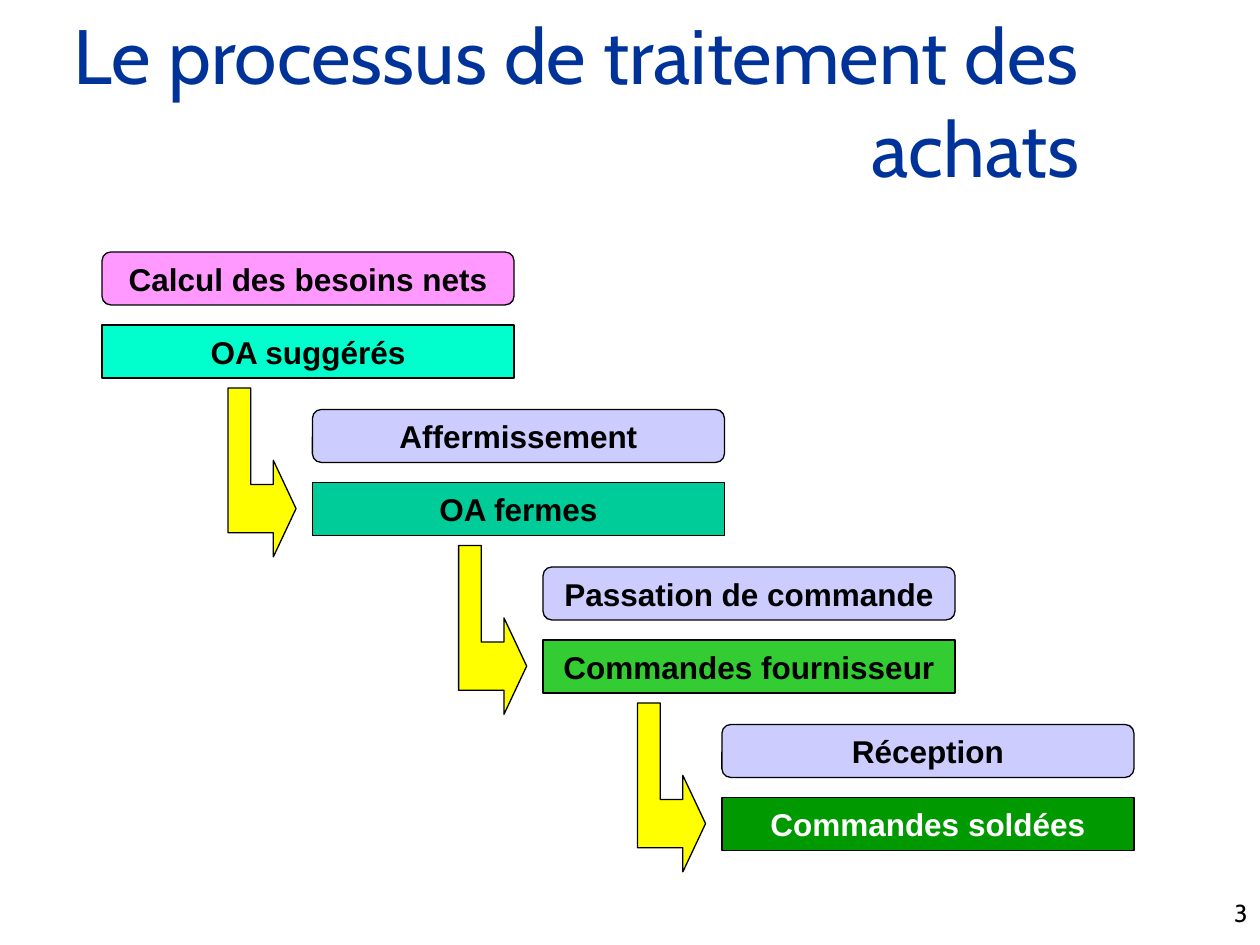
from dataclasses import dataclass

from pptx import Presentation
from pptx.dml.color import RGBColor
from pptx.enum.shapes import MSO_SHAPE
from pptx.enum.text import MSO_ANCHOR, MSO_AUTO_SIZE, PP_ALIGN
from pptx.util import Inches, Pt


@dataclass(frozen=True)
class Theme:
    title: str = "003399"
    black: str = "000000"
    white: str = "FFFFFF"
    pink: str = "FF99FF"
    lilac: str = "CCCCFF"
    aqua: str = "00FFCC"
    teal: str = "00CC99"
    green: str = "33CC33"
    dark_green: str = "009900"
    yellow: str = "FFFF00"
    heading_font: str = "Cabin"
    body_font: str = "Arial"
    title_size: int = 44
    body_size: int = 18
    number_size: int = 14
    line_width: float = 0.75


THEME = Theme()
BOX_W, BOX_H = 3.27, 0.42
RESULT_OFFSET = 0.58
STEP_TOP, STEP_PITCH = 2.0, 1.25
ARROW_W, ARROW_H = 0.54, 1.34
ARROW_DX, ARROW_DY = -0.67, -0.17

STEPS = [
    (0.81, "Calcul des besoins nets", THEME.pink, "OA suggérés", THEME.aqua, THEME.black),
    (2.48, "Affermissement", THEME.lilac, "OA fermes", THEME.teal, THEME.black),
    (4.31, "Passation de commande", THEME.lilac, "Commandes fournisseur", THEME.green, THEME.black),
    (5.73, "Réception", THEME.lilac, "Commandes soldées", THEME.dark_green, THEME.white),
]


def put_text(tf, text, *, size, font, color=THEME.black, bold=False,
             align=PP_ALIGN.CENTER, anchor=MSO_ANCHOR.MIDDLE, wrap=True):
    tf.word_wrap = wrap
    tf.auto_size = MSO_AUTO_SIZE.NONE
    tf.vertical_anchor = anchor
    p = tf.paragraphs[0]
    p.alignment = align
    r = p.add_run()
    r.text = text
    r.font.size = Pt(size)
    r.font.name = font
    r.font.bold = bold
    r.font.color.rgb = RGBColor.from_string(color)


def paint(sp, fill):
    sp.shadow.inherit = False
    sp.fill.solid()
    sp.fill.fore_color.rgb = RGBColor.from_string(fill)
    sp.line.color.rgb = RGBColor.from_string(THEME.black)
    sp.line.width = Pt(THEME.line_width)


def add_title(s, x, y, w, h):
    sp = s.shapes.title
    sp.left, sp.top, sp.width, sp.height = map(Inches, (x, y, w, h))
    put_text(sp.text_frame, "Le processus de traitement des achats",
             size=THEME.title_size, font=THEME.heading_font,
             color=THEME.title, align=PP_ALIGN.RIGHT)


def add_page_number(s, x, y, w, h):
    sp = s.shapes.add_textbox(*map(Inches, (x, y, w, h)))
    put_text(sp.text_frame, "3", size=THEME.number_size, font=THEME.heading_font,
             align=PP_ALIGN.RIGHT, anchor=MSO_ANCHOR.TOP)


def add_box(s, kind, x, y, text, fill, color=THEME.black):
    sp = s.shapes.add_shape(kind, *map(Inches, (x, y, BOX_W, BOX_H)))
    paint(sp, fill)
    put_text(sp.text_frame, text, size=THEME.body_size, font=THEME.body_font,
             color=color, bold=True, wrap=False)


def add_step(s, x, y, action, action_fill, result, result_fill, result_color):
    add_box(s, MSO_SHAPE.ROUNDED_RECTANGLE, x, y, action, action_fill)
    add_box(s, MSO_SHAPE.RECTANGLE, x, y + RESULT_OFFSET, result, result_fill, result_color)


def add_bent_arrow(s, x, y, w, h):
    stem, neck = w / 3, w * 2 / 3
    tip, half_head, half_shaft = h * 5 / 7, h * 2 / 7, h / 7
    points = [
        (w, tip), (neck, tip - half_head), (neck, tip - half_shaft),
        (stem, tip - half_shaft), (stem, 0), (0, 0),
        (0, tip + half_shaft), (neck, tip + half_shaft), (neck, tip + half_head),
    ]
    corners = [(Inches(x + dx), Inches(y + dy)) for dx, dy in points]
    fb = s.shapes.build_freeform(*corners[0])
    fb.add_line_segments(corners[1:], close=True)
    paint(fb.convert_to_shape(), THEME.yellow)


def add_process(s, x, y, pitch):
    for i, (left, *step) in enumerate(STEPS):
        top = y + i * pitch
        add_step(s, x + left, top, *step)
        if i:
            add_bent_arrow(s, x + left + ARROW_DX, top + ARROW_DY, ARROW_W, ARROW_H)


def main():
    prs = Presentation()
    prs.slide_width, prs.slide_height = Inches(10), Inches(7.5)
    s = prs.slides.add_slide(prs.slide_layouts[5])
    add_page_number(s, 7.92, 7.08, 2.08, 0.25)
    add_title(s, 0.17, 0.17, 8.5, 1.25)
    add_process(s, 0, STEP_TOP, STEP_PITCH)
    prs.save("out.pptx")


if __name__ == "__main__":
    main()
